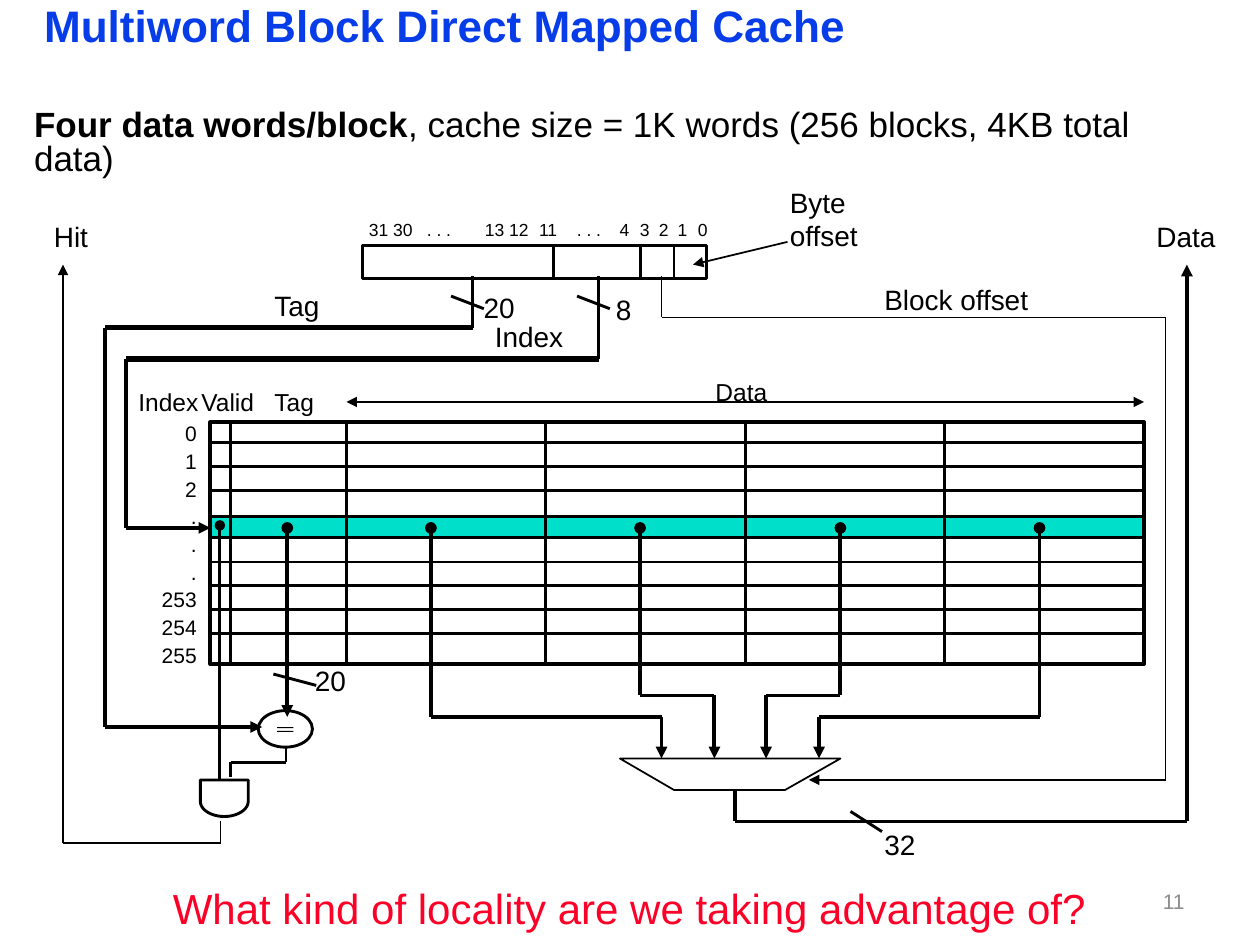
from dataclasses import dataclass
from itertools import pairwise
from math import cos, pi, sin

from lxml.etree import SubElement
from pptx import Presentation
from pptx.dml.color import RGBColor
from pptx.enum.shapes import MSO_CONNECTOR as CONN, MSO_SHAPE as SHAPE
from pptx.enum.text import MSO_ANCHOR as ANCHOR, MSO_AUTO_SIZE as FIT, PP_ALIGN as ALIGN
from pptx.oxml.ns import qn
from pptx.util import Cm, Pt


@dataclass(frozen=True)
class Theme:
    font: str = "Arial"
    black: str = "000000"
    title: str = "063DE8"
    question: str = "FC0128"
    number: str = "8C8C8C"
    hit_row: str = "00DFCA"
    title_size: float = 25.2
    question_size: int = 24
    body_size: int = 20
    label_size: int = 16
    head_size: int = 14
    index_size: int = 12
    bit_size: int = 10
    thin: float = 1
    edge: float = 1.63
    bus: float = 2.25
    wide: float = 3


T = Theme()

# Cache array geometry, in grid units of 2.54 cm
LEFT, RIGHT, TOP, BOTTOM = 1.67, 9.08, 3.35, 5.27
HIT_TOP, HIT_BOTTOM, HIT_Y = 4.1, 4.27, 4.19
ROW = 0.19
DATA_X, WORD = 2.75, 1.583
BIT_TABS = (0.46, 0.92, 1.35, 1.65, 1.99, 2.15, 2.3, 2.45, 2.61)


def u(units):
    return Cm(2.54 * units)


def color(hex_value):
    return RGBColor.from_string(hex_value)


def add_run(p, text, size, ink=T.black, bold=False):
    r = p.add_run()
    r.text = text
    r.font.name, r.font.size, r.font.bold = T.font, Pt(size), bold
    r.font.color.rgb = color(ink)


def place(sp, x, y, w, h):
    sp.left, sp.top, sp.width, sp.height = u(x), u(y), u(w), u(h)
    tf = sp.text_frame
    tf.word_wrap, tf.auto_size = True, FIT.NONE
    return tf


def text(s, x, y, w, h, lines, size=T.label_size, ink=T.black,
         align=ALIGN.LEFT, spacing=None, wrap=False):
    tf = s.shapes.add_textbox(u(x), u(y), u(w), u(h)).text_frame
    tf.word_wrap = wrap
    for i, line in enumerate(lines):
        p = tf.add_paragraph() if i else tf.paragraphs[0]
        p.alignment = align
        if spacing:
            p.line_spacing = spacing
        add_run(p, line, size, ink)
    return tf


def wire(s, *points, width=T.bus, head=None, tail=None, wide=None):
    """Chain of straight lines; head and tail mark its two ends."""
    segments = list(pairwise(points))
    for i, ((x1, y1), (x2, y2)) in enumerate(segments):
        c = s.shapes.add_connector(CONN.STRAIGHT, u(x1), u(y1), u(x2), u(y2))
        c.line.color.rgb = color(T.black)
        c.line.width = Pt(T.wide if i == wide else width)
        ln = c.line._ln
        if head and i == 0:
            SubElement(ln, qn("a:headEnd"), type=head)
        if tail and i == len(segments) - 1:
            SubElement(ln, qn("a:tailEnd"), type=tail)
        SubElement(c._element.spPr, qn("a:effectLst"))


def style(sp, width=T.edge, fill=None):
    sp.shadow.inherit = False
    if fill:
        sp.fill.solid()
        sp.fill.fore_color.rgb = color(fill)
    else:
        sp.fill.background()
    if width:
        sp.line.color.rgb = color(T.black)
        sp.line.width = Pt(width)
    else:
        sp.line.fill.background()


def shape(s, kind, x, y, w, h, width=T.edge, fill=None):
    style(s.shapes.add_shape(kind, u(x), u(y), u(w), u(h)), width, fill)


def outline(s, points, width=T.edge):
    first, *rest = [(u(x), u(y)) for x, y in points]
    fb = s.shapes.build_freeform(*first)
    fb.add_line_segments(rest, close=True)
    style(fb.convert_to_shape(), width)


def slash(s, x, y, dx, dy):
    wire(s, (x, y), (x + dx, y + dy), width=T.edge)


def headings(s):
    title, body = s.placeholders[0], s.placeholders[1]
    tf = place(title, 0.25, 0, 8.92, 0.46)
    tf.vertical_anchor = ANCHOR.MIDDLE
    p = tf.paragraphs[0]
    p.alignment, p.line_spacing = ALIGN.LEFT, 0.87
    add_run(p, "Multiword Block Direct Mapped Cache", T.title_size, T.title, True)

    p = place(body, 0.17, 0.83, 9.58, 0.42).paragraphs[0]
    p.line_spacing, p.space_before = 0.8, Pt(0)
    pPr = p._p.get_or_add_pPr()
    pPr.set("marL", "0")
    pPr.set("indent", "0")
    SubElement(pPr, qn("a:buNone"))
    add_run(p, "Four data words/block", T.body_size, bold=True)
    add_run(p, ", cache size = 1K words (256 blocks, 4KB total data)", T.body_size)


def cache_array(s):
    shape(s, SHAPE.RECTANGLE, LEFT, HIT_TOP, RIGHT - LEFT, HIT_BOTTOM - HIT_TOP,
          fill=T.hit_row)
    for first, count in ((3.51, 3), (4.46, 4)):
        for i in range(count):
            y = first + i * ROW
            wire(s, (LEFT, y), (RIGHT, y), width=T.edge)
    shape(s, SHAPE.RECTANGLE, LEFT, TOP, RIGHT - LEFT, BOTTOM - TOP, T.bus)
    for x in (1.83, *(DATA_X + i * WORD for i in range(4))):
        wire(s, (x, TOP), (x, BOTTOM), width=T.edge)
    for x, y, w, name in ((1, 3.02, 0.68, "Index"), (1.5, 3.02, 0.63, "Valid"),
                          (2.08, 3.02, 0.53, "Tag"), (5.58, 2.94, 0.61, "Data")):
        text(s, x, y, w, 0.33, [name], T.head_size)
    wire(s, (DATA_X, 3.19), (RIGHT, 3.19), width=T.thin,
         head="triangle", tail="triangle")
    text(s, 1.18, 3.27, 0.48, 2.09, ["0", "1", "2", ".", ".", ".", "253", "254", "255"],
         T.index_size, align=ALIGN.RIGHT, spacing=1.1)


def address_register(s):
    shape(s, SHAPE.RECTANGLE, 2.88, 1.95, 2.73, 0.26)
    for x in (4.39, 5.08, 5.35):
        wire(s, (x, 1.95), (x, 2.2), width=T.edge)
    bits = "31 30\t. . .\t13 12\t11\t. . .\t4\t3\t2\t1\t0"
    tf = text(s, 2.83, 1.69, 3.35, 0.27, [bits], T.bit_size, wrap=True)
    tabs = SubElement(tf.paragraphs[0]._p.get_or_add_pPr(), qn("a:tabLst"))
    for stop in BIT_TABS:
        SubElement(tabs, qn("a:tab"), pos=str(u(stop)), algn="l")
    text(s, 6.17, 1.42, 0.92, 0.64, ["Byte offset"], wrap=True)
    wire(s, (6.25, 1.92), (5.5, 2.1), width=T.thin, tail="triangle")


def lookup(s):
    # Index and tag buses
    wire(s, (4.75, 2.19), (4.75, 2.85), (1, 2.85), (1, HIT_Y), (LEFT, HIT_Y),
         tail="triangle", wide=1)
    wire(s, (3.75, 2.19), (3.75, 2.6), (0.83, 2.6), (0.83, 5.77), (2.08, 5.77),
         tail="triangle", wide=1)
    wire(s, (2.28, HIT_Y), (2.28, 5.69), head="oval", tail="triangle")
    for x, y, dx, dy in ((4.58, 2.35, 0.26, 0.1), (3.58, 2.35, 0.26, 0.1),
                         (2.17, 5.35, 0.34, 0.09)):
        slash(s, x, y, dx, dy)

    # Tag comparator
    shape(s, SHAPE.OVAL, 2.05, 5.64, 0.43, 0.29)
    for y in (5.77, 5.8):
        shape(s, SHAPE.RECTANGLE, 2.2, y, 0.13, 0.01, width=None, fill=T.black)

    # AND gate and hit signal
    arc = [(1.78 + 0.19 * cos(pi * i / 20), 6.36 + 0.12 * sin(pi * i / 20))
           for i in range(21)]
    outline(s, [(1.59, 6.19), (1.97, 6.19), *arc])
    wire(s, (1.745, 4.17), (1.745, 6.19), width=T.edge, head="oval")
    wire(s, (2.27, 5.93), (2.27, 6.05), (1.83, 6.05), (1.83, 6.17), width=T.edge)
    wire(s, (1.75, 6.52), (1.75, 6.69), (0.5, 6.69), (0.5, 2.1),
         width=T.thin, tail="triangle")


def word_select(s):
    # Multiplexer with one wire from each data word
    outline(s, [(4.92, 6.02), (5.35, 6.27), (6.23, 6.27), (6.67, 6.02)], T.thin)
    for x, bend, port in ((3.42, 5.69, 5.25), (5.08, 5.52, 5.67),
                          (6.67, 5.52, 6.08), (8.25, 5.69, 6.5)):
        wire(s, (x, HIT_Y), (x, bend), (port, bend), (port, 6.02),
             head="oval", tail="triangle")
    # Block offset and data output
    wire(s, (5.25, 2.19), (5.25, 2.52), (9.25, 2.52), (9.25, 6.19), (6.42, 6.19),
         width=T.thin, tail="triangle")
    wire(s, (5.83, 6.27), (5.83, 6.52), (9.42, 6.52), (9.42, 2.1), tail="triangle")
    slash(s, 6.75, 6.44, 0.25, 0.16)


def labels(s):
    for x, y, w, name in (
            (0.33, 1.69, 0.47, "Hit"), (9.08, 1.69, 0.67, "Data"),
            (2.08, 2.24, 0.58, "Tag"), (3.74, 2.26, 0.45, "20"),
            (4.79, 2.27, 0.33, "8"), (3.83, 2.49, 0.74, "Index"),
            (2.4, 5.22, 0.45, "20"), (6.92, 6.52, 0.45, "32")):
        text(s, x, y, w, 0.37, [name])
    text(s, 6.92, 2.19, 1.75, 0.37, ["Block offset"], wrap=True)


def closing(s):
    text(s, 0.58, 7, 8.83, 0.5, ["What kind of locality are we taking advantage of?"],
         T.question_size, T.question, ALIGN.CENTER, 0.9, wrap=True)
    tf = text(s, 7.17, 6.95, 2.33, 0.4, ["11"], T.index_size, T.number,
              ALIGN.RIGHT, wrap=True)
    tf.vertical_anchor = ANCHOR.MIDDLE


def main():
    prs = Presentation()
    prs.slide_width, prs.slide_height = Cm(25.4), Cm(19.05)
    s = prs.slides.add_slide(prs.slide_layouts[1])
    for part in (headings, cache_array, address_register, lookup, word_select,
                 labels, closing):
        part(s)
    prs.save("out.pptx")


if __name__ == "__main__":
    main()
